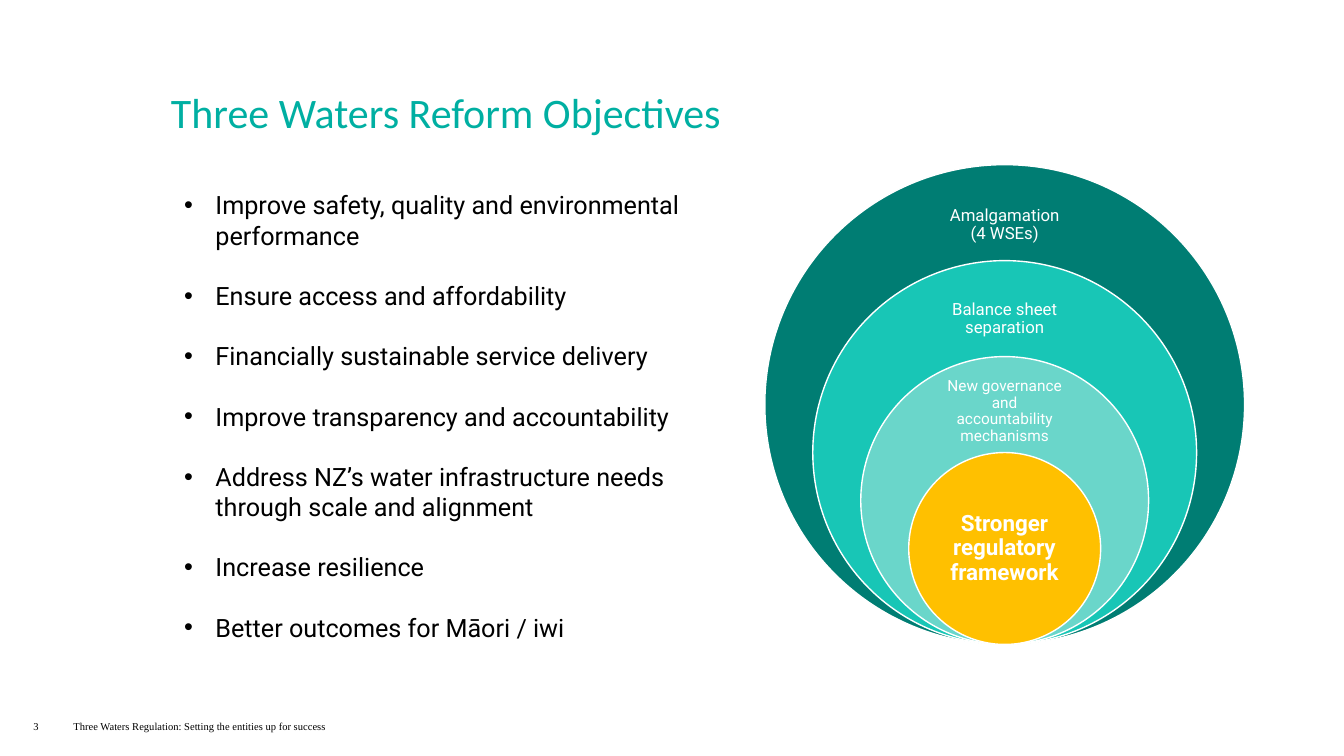
from dataclasses import dataclass

from lxml import etree
from pptx import Presentation
from pptx.dml.color import RGBColor
from pptx.enum.shapes import MSO_SHAPE
from pptx.enum.text import MSO_ANCHOR, PP_ALIGN
from pptx.oxml.ns import qn
from pptx.slide import Slide
from pptx.text.text import TextFrame, _Paragraph
from pptx.util import Cm, Pt

OVAL = MSO_SHAPE.OVAL
MIDDLE, TOP = MSO_ANCHOR.MIDDLE, MSO_ANCHOR.TOP
CENTER, LEFT = PP_ALIGN.CENTER, PP_ALIGN.LEFT


@dataclass(frozen=True)
class Theme:
    heading: str = "00AFA2"
    ink: str = "000000"
    white: str = "FFFFFF"
    heading_font: str = "Calibri"
    body_font: str = "Roboto"
    footer_font: str = "Times New Roman"
    heading_size: float = 30
    body_size: float = 18
    footer_size: float = 7.5
    bullet_gap: float = 21.5
    bullet_indent: float = 0.79


@dataclass(frozen=True)
class Box:
    """Position, size and insets (horizontal, vertical) in centimetres."""
    left: float
    top: float
    width: float
    height: float
    inset: tuple[float, float] = (0.25, 0.13)


@dataclass(frozen=True)
class TextStyle:
    font: str
    size: float
    color: str
    bold: bool = False
    align: PP_ALIGN = LEFT
    spacing: float = 1.0


@dataclass(frozen=True)
class Ring:
    label: str
    fill: str
    label_box: Box
    size: float
    bold: bool = False


THEME = Theme()

OBJECTIVES = (
    "Improve safety, quality and environmental performance",
    "Ensure access and affordability",
    "Financially sustainable service delivery",
    "Improve transparency and accountability",
    "Address NZ’s water infrastructure needs through scale and alignment",
    "Increase resilience",
    "Better outcomes for Māori / iwi",
)

# Nested circles share a centre line and a bottom edge
RINGS_CENTER, RINGS_BOTTOM, OUTER_DIAMETER = 25.32, 16.24, 12.09
SHRINK = 0.2
RINGS = (
    Ring("Amalgamation (4 WSEs)", "007D73",
         Box(23.63, 4.78, 3.38, 1.8, (0.23, 0.23)), 12),
    Ring("Balance sheet separation", "18C6B6",
         Box(23.63, 7.16, 3.38, 1.75, (0.23, 0.23)), 12),
    Ring("New governance and accountability mechanisms", "6AD6CA",
         Box(23.63, 9.55, 3.38, 1.63, (0.23, 0.23)), 11),
    Ring("Stronger regulatory framework", "FFC000",
         Box(23.6, 12.62, 3.43, 2.41, (0.3, 0.3)), 16, True),
)


def style_paragraph(paragraph: _Paragraph, style: TextStyle) -> None:
    paragraph.alignment = style.align
    paragraph.line_spacing = style.spacing
    font = paragraph.font
    font.name, font.size, font.bold = style.font, Pt(style.size), style.bold
    font.color.rgb = RGBColor.from_string(style.color)


def add_text_frame(slide: Slide, box: Box, anchor: MSO_ANCHOR) -> TextFrame:
    shape = slide.shapes.add_textbox(
        Cm(box.left), Cm(box.top), Cm(box.width), Cm(box.height))
    frame = shape.text_frame
    frame.word_wrap = True
    frame.vertical_anchor = anchor
    frame.margin_left = frame.margin_right = Cm(box.inset[0])
    frame.margin_top = frame.margin_bottom = Cm(box.inset[1])
    return frame


def add_text(slide: Slide, text: str, box: Box, style: TextStyle) -> None:
    paragraph = add_text_frame(slide, box, MIDDLE).paragraphs[0]
    paragraph.text = text
    style_paragraph(paragraph, style)


def add_bullet(paragraph: _Paragraph) -> None:
    properties = paragraph._p.get_or_add_pPr()
    properties.set("marL", str(Cm(THEME.bullet_indent)))
    properties.set("indent", str(-Cm(THEME.bullet_indent)))
    font = etree.SubElement(properties, qn("a:buFont"))
    font.set("typeface", "Arial")
    bullet = etree.SubElement(properties, qn("a:buChar"))
    bullet.set("char", "•")


def add_objectives(slide: Slide, box: Box) -> None:
    style = TextStyle(THEME.body_font, THEME.body_size, THEME.ink)
    frame = add_text_frame(slide, box, TOP)
    for index, objective in enumerate(OBJECTIVES):
        paragraph = frame.add_paragraph() if index else frame.paragraphs[0]
        paragraph.text = objective
        add_bullet(paragraph)
        style_paragraph(paragraph, style)
        if index:
            paragraph.space_before = Pt(THEME.bullet_gap)


def add_ring(slide: Slide, ring: Ring, diameter: float) -> None:
    circle = slide.shapes.add_shape(
        OVAL, Cm(RINGS_CENTER - diameter / 2), Cm(RINGS_BOTTOM - diameter),
        Cm(diameter), Cm(diameter))
    circle.shadow.inherit = False
    circle.fill.solid()
    circle.fill.fore_color.rgb = RGBColor.from_string(ring.fill)
    circle.line.color.rgb = RGBColor.from_string(THEME.white)
    circle.line.width = Pt(1)
    add_text(slide, ring.label, ring.label_box, TextStyle(
        THEME.body_font, ring.size, THEME.white, ring.bold, CENTER, 0.9))


def main() -> None:
    presentation = Presentation()
    presentation.slide_width, presentation.slide_height = Cm(33.87), Cm(19.05)
    slide = presentation.slides.add_slide(presentation.slide_layouts[6])

    # Title and objectives
    add_text(slide, "Three Waters Reform Objectives",
             Box(4.06, 2.18, 25.73, 1.42),
             TextStyle(THEME.heading_font, THEME.heading_size, THEME.heading,
                       spacing=0.9))
    add_objectives(slide, Box(4.39, 4.78, 13.41, 13.97, (0.25, 0)))

    # Nested circles, outermost first
    for index, ring in enumerate(RINGS):
        add_ring(slide, ring, OUTER_DIAMETER * (1 - SHRINK * index))

    # Footer
    footer = TextStyle(THEME.footer_font, THEME.footer_size, THEME.ink)
    add_text(slide, "3", Box(0.84, 18.01, 0.71, 0.58, (0, 0.13)), footer)
    add_text(slide,
             "Three Waters Regulation: Setting the entities up for success",
             Box(1.85, 18.01, 11.43, 0.58, (0, 0.13)), footer)

    presentation.save("out.pptx")


if __name__ == "__main__":
    main()
